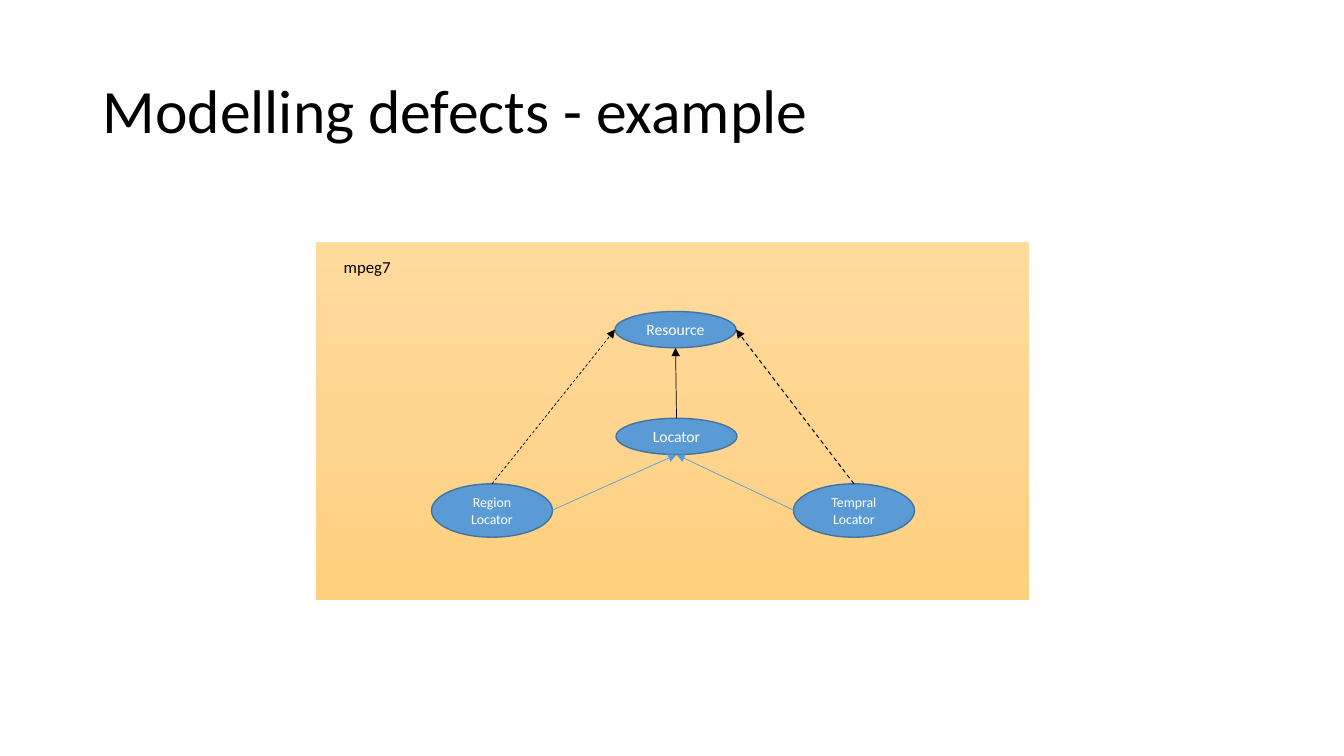
from copy import deepcopy
from dataclasses import dataclass

from pptx import Presentation
from pptx.dml.color import RGBColor
from pptx.enum.dml import MSO_LINE
from pptx.enum.shapes import MSO_CONNECTOR, MSO_SHAPE
from pptx.enum.text import MSO_ANCHOR, PP_ALIGN
from pptx.oxml.ns import qn
from pptx.oxml.xmlchemy import OxmlElement
from pptx.shapes.autoshape import Shape
from pptx.slide import Slide
from pptx.util import Emu, Pt

EMU_PER_PX = 9144
FONT = "Calibri"
BLACK = RGBColor(0x00, 0x00, 0x00)
WHITE = RGBColor(0xFF, 0xFF, 0xFF)
BLUE = RGBColor(0x5B, 0x9B, 0xD5)
DARK_BLUE = RGBColor(0x43, 0x73, 0x9E)
PANEL_COLORS = (
    RGBColor(0xFF, 0xDB, 0x9E),
    RGBColor(0xFF, 0xD5, 0x90),
    RGBColor(0xFF, 0xD0, 0x7C),
)
RECTANGLE = MSO_SHAPE.RECTANGLE
OVAL = MSO_SHAPE.OVAL
STRAIGHT = MSO_CONNECTOR.STRAIGHT
DASH = MSO_LINE.DASH
SOLID = MSO_LINE.SOLID
LEFT = PP_ALIGN.LEFT
CENTER = PP_ALIGN.CENTER
TOP = MSO_ANCHOR.TOP
MIDDLE = MSO_ANCHOR.MIDDLE


@dataclass(frozen=True)
class Box:
    left: int
    top: int
    width: int
    height: int

    def emu(self) -> tuple[Emu, Emu, Emu, Emu]:
        return px(self.left), px(self.top), px(self.width), px(self.height)

    def side(self, name: str) -> tuple[int, int]:
        middle_x = self.left + self.width // 2
        middle_y = self.top + self.height // 2
        return {
            "top": (middle_x, self.top),
            "bottom": (middle_x, self.top + self.height),
            "left": (self.left, middle_y),
            "right": (self.left + self.width, middle_y),
        }[name]


@dataclass(frozen=True)
class Concept:
    lines: tuple[str, ...]
    box: Box
    size: float


@dataclass(frozen=True)
class Arrow:
    source: Concept
    source_side: str
    target: Concept
    target_side: str
    color: RGBColor
    width: float = 0.5
    dash: MSO_LINE = SOLID


RESOURCE = Concept(("Resource",), Box(610, 309, 120, 36), 11.2)
LOCATOR = Concept(("Locator",), Box(611, 415, 120, 36), 11.2)
REGION = Concept(("Region", "Locator"), Box(428, 480, 120, 53), 9.9)
TEMPORAL = Concept(("Tempral", "Locator"), Box(787, 480, 120, 53), 9.9)
CONCEPTS = (LOCATOR, TEMPORAL, RESOURCE, REGION)
ARROWS = (
    Arrow(REGION, "top", RESOURCE, "left", BLACK, dash=DASH),
    Arrow(TEMPORAL, "top", RESOURCE, "right", BLACK, width=0.75, dash=DASH),
    Arrow(LOCATOR, "top", RESOURCE, "bottom", BLACK),
    Arrow(TEMPORAL, "left", LOCATOR, "bottom", BLUE),
    Arrow(REGION, "right", LOCATOR, "bottom", BLUE),
)


def px(length: int) -> Emu:
    return Emu(length * EMU_PER_PX)


def write_text(
    shape: Shape,
    lines: tuple[str, ...],
    *,
    size: float,
    color: RGBColor = BLACK,
    align: PP_ALIGN = LEFT,
    anchor: MSO_ANCHOR = MIDDLE,
    spacing: float = 1.0,
) -> None:
    frame = shape.text_frame
    frame.word_wrap = True
    frame.vertical_anchor = anchor
    frame.text = "\n".join(lines)
    for paragraph in frame.paragraphs:
        paragraph.alignment = align
        paragraph.line_spacing = spacing
        paragraph.font.name = FONT
        paragraph.font.size = Pt(size)
        paragraph.font.color.rgb = color


def add_panel(slide: Slide, box: Box) -> None:
    panel = slide.shapes.add_shape(RECTANGLE, *box.emu())
    panel.shadow.inherit = False
    panel.line.fill.background()
    panel.fill.gradient()
    panel.fill.gradient_angle = 270
    stop_list = panel._element.spPr.find(".//" + qn("a:gsLst"))
    stop_list.insert(1, deepcopy(stop_list[0]))
    for index, stop in enumerate(panel.fill.gradient_stops):
        stop.position = index / 2
        stop.color.rgb = PANEL_COLORS[index]


def add_concept(slide: Slide, concept: Concept) -> None:
    oval = slide.shapes.add_shape(OVAL, *concept.box.emu())
    oval.shadow.inherit = False
    oval.fill.solid()
    oval.fill.fore_color.rgb = BLUE
    oval.line.color.rgb = DARK_BLUE
    oval.line.width = Pt(1)
    write_text(oval, concept.lines, size=concept.size, color=WHITE, align=CENTER)


def add_arrow(slide: Slide, arrow: Arrow) -> None:
    start = arrow.source.box.side(arrow.source_side)
    end = arrow.target.box.side(arrow.target_side)
    connector = slide.shapes.add_connector(STRAIGHT, *map(px, start + end))
    connector.line.color.rgb = arrow.color
    connector.line.width = Pt(arrow.width)
    connector.line.dash_style = arrow.dash
    head = OxmlElement("a:tailEnd")
    head.set("type", "triangle")
    connector.line._get_or_add_ln().append(head)
    connector._element.spPr.append(OxmlElement("a:effectLst"))


def main() -> None:
    presentation = Presentation()
    presentation.slide_width = px(1333)
    presentation.slide_height = px(750)
    slide = presentation.slides.add_slide(presentation.slide_layouts[6])

    title = slide.shapes.add_textbox(*Box(92, 40, 1150, 145).emu())
    write_text(title, ("Modelling defects - example",), size=44, spacing=0.9)
    add_panel(slide, Box(313, 240, 708, 355))
    label = slide.shapes.add_textbox(*Box(331, 250, 175, 30).emu())
    write_text(label, ("mpeg7",), size=12, anchor=TOP)
    for concept in CONCEPTS:
        add_concept(slide, concept)
    for arrow in ARROWS:
        add_arrow(slide, arrow)

    presentation.save("out.pptx")


if __name__ == "__main__":
    main()
